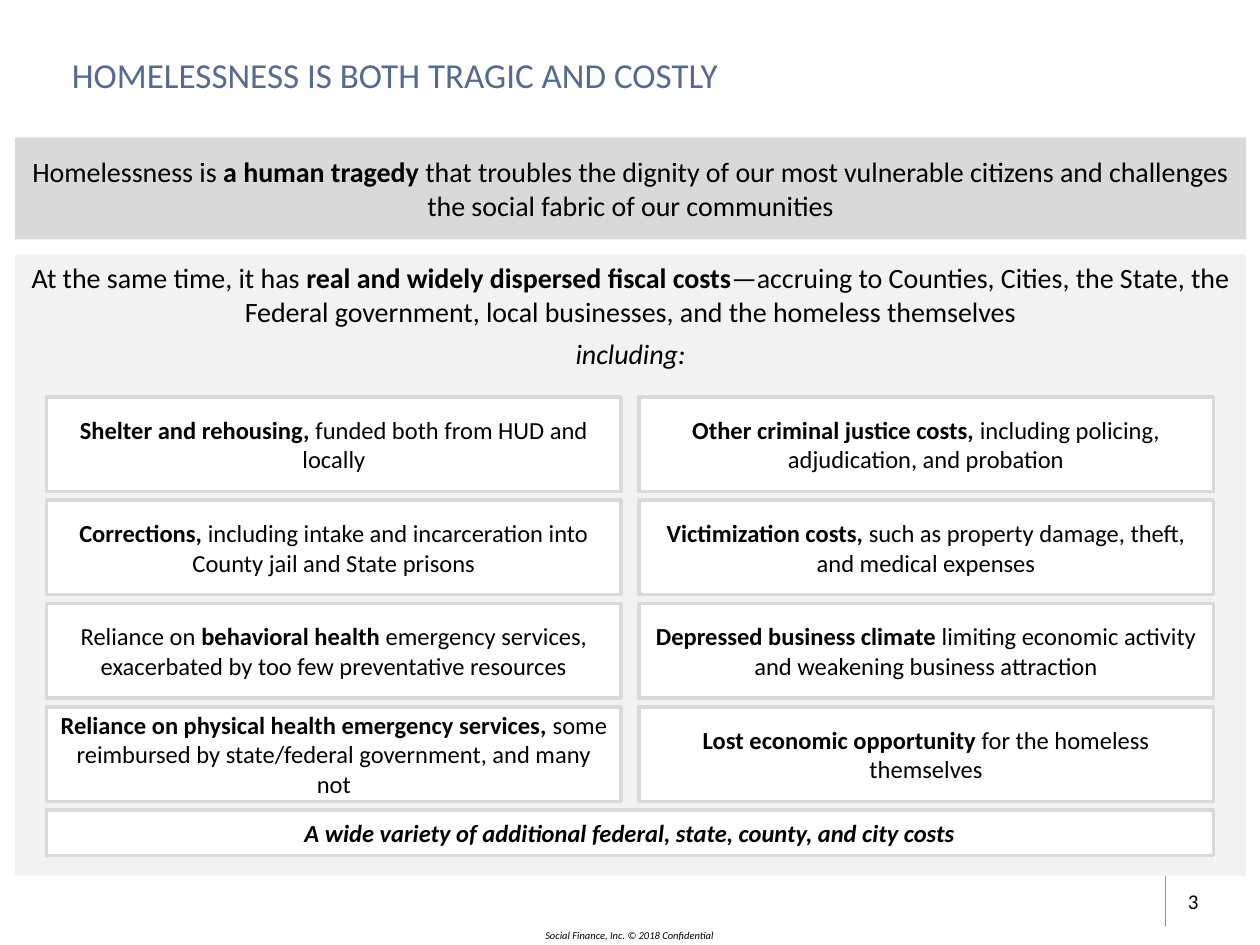
from dataclasses import dataclass

from lxml.etree import SubElement
from pptx import Presentation
from pptx.dml.color import RGBColor as Rgb
from pptx.enum.shapes import MSO_CONNECTOR as Link, MSO_SHAPE as Form
from pptx.enum.text import MSO_ANCHOR as Anchor, PP_ALIGN as Align
from pptx.oxml.ns import qn
from pptx.util import Inches, Pt

UNIT = Inches(0.1)
COLS, ROWS = 100, 75


@dataclass(frozen=True)
class Theme:
    """Hold the colours, font and type sizes."""
    font: str = "Calibri"
    ink: str = "000000"
    head: str = "556991"
    band: str = "D9D9D9"
    panel: str = "F2F2F2"
    card: str = "FFFFFF"
    rule: str = "9B8F8B"
    title: int = 20
    lead: int = 16
    body: int = 14
    page: int = 12
    note: int = 6
    edge: float = 2
    hair: float = 0.75


@dataclass(frozen=True)
class Box:
    """Hold a place in grid columns and rows."""
    x: float
    y: float
    w: float
    h: float

    def sub(self, x, y, w, h):
        """Return a box placed relative to this one."""
        return Box(self.x + x, self.y + y, w, h)

    def spot(self):
        """Return left, top, width and height as lengths."""
        return [round(n * UNIT) for n in (self.x, self.y, self.w, self.h)]


LOOK = Theme()

CARDS = [
    [
        [("Shelter and rehousing, ", "b"), ("funded both from HUD and locally", "")],
        [("Corrections, ", "b"),
         ("including intake and incarceration into County jail and State prisons", "")],
        [("Reliance on ", ""), ("behavioral health ", "b"),
         ("emergency services, exacerbated by too few preventative resources", "")],
        [("Reliance on physical health emergency services, ", "b"),
         ("some reimbursed by state/federal government, and many not", "")],
    ],
    [
        [("Other criminal justice costs, ", "b"),
         ("including policing, adjudication, and probation", "")],
        [("Victimization costs, ", "b"),
         ("such as property damage, theft, and medical expenses", "")],
        [("Depressed business climate ", "b"),
         ("limiting economic activity and weakening business attraction", "")],
        [("Lost economic opportunity ", "b"), ("for the homeless themselves", "")],
    ],
]
MORE = [("A wide variety of additional federal, state, county, and city costs", "bi")]
PLIGHT = [
    ("Homelessness is ", ""),
    ("a human tragedy ", "b"),
    ("that troubles the dignity of our most vulnerable citizens and challenges "
     "the social fabric of our communities", ""),
]
COSTS = [
    ("At the same time, it has ", ""),
    ("real and widely dispersed fiscal costs", "b"),
    ("—accruing to Counties, Cities, the State, the Federal government, "
     "local businesses, and the homeless themselves", ""),
]


def write(frame, paras, size, color=LOOK.ink, align=Align.CENTER, gap=0):
    """Fill a text frame run by run."""
    frame.word_wrap = True
    for i, runs in enumerate(paras):
        para = frame.add_paragraph() if i else frame.paragraphs[0]
        para.alignment = align
        if i:
            para.space_before = Pt(gap)
        for text, style in runs:
            run = para.add_run()
            run.text = text
            font = run.font
            font.name, font.size = LOOK.font, Pt(size)
            font.bold, font.italic = "b" in style, "i" in style
            font.color.rgb = Rgb.from_string(color)


def block(slide, box, fill, paras, size, edge=None, anchor=Anchor.MIDDLE, gap=0):
    """Add a filled rectangle with text."""
    shape = slide.shapes.add_shape(Form.RECTANGLE, *box.spot())
    shape.shadow.inherit = False
    shape.fill.solid()
    shape.fill.fore_color.rgb = Rgb.from_string(fill)
    if edge:
        shape.line.color.rgb = Rgb.from_string(edge)
        shape.line.width = Pt(LOOK.edge)
    else:
        shape.line.fill.background()
    shape.text_frame.vertical_anchor = anchor
    write(shape.text_frame, paras, size, gap=gap)


def label(slide, box, runs, size, color=LOOK.ink, align=Align.LEFT,
          anchor=Anchor.MIDDLE, inset=0):
    """Add a plain line of text."""
    frame = slide.shapes.add_textbox(*box.spot()).text_frame
    frame.margin_left = Inches(inset)
    frame.margin_top = frame.margin_right = frame.margin_bottom = 0
    frame.vertical_anchor = anchor
    write(frame, [runs], size, color, align)


def footer(slide, box):
    """Place the page number, its rule and the copyright line."""
    label(slide, box.sub(93.3, 0, 6.7, 4), [("3", "")], LOOK.page, inset=0.1)
    x, y, _, h = box.sub(92.5, 0, 0, 4).spot()
    rule = slide.shapes.add_connector(Link.STRAIGHT, x, y, x, y + h)
    rule.line.color.rgb = Rgb.from_string(LOOK.rule)
    rule.line.width = Pt(LOOK.hair)
    SubElement(rule.element.spPr, qn("a:effectLst"))
    label(slide, box.sub(40.9, 4.2, 18.1, 1.1),
          [("Social Finance, Inc. © 2018 Confidential", "i")],
          LOOK.note, align=Align.CENTER, anchor=Anchor.TOP)


def cards(slide, box):
    """Place two columns of cost cards above one wide card."""
    gap, lane, high, last = 1.4, 0.7, 7.5, 3.6
    wide = (box.w - gap) / 2
    for c, column in enumerate(CARDS):
        for r, runs in enumerate(column):
            cell = box.sub(c * (wide + gap), r * (high + lane), wide, high)
            block(slide, cell, LOOK.card, [runs], LOOK.body, LOOK.band)
    foot = box.sub(0, box.h - last, box.w, last)
    block(slide, foot, LOOK.card, [MORE], LOOK.body, LOOK.band)


def costs(slide, box):
    """Place the cost panel and its cards."""
    block(slide, box, LOOK.panel, [COSTS, [("including:", "i")]], LOOK.lead,
          anchor=Anchor.TOP, gap=5)
    cards(slide, box.sub(2.5, 11.3, box.w - 5.1, 36.4))


def main():
    """Build and save the slide."""
    deck = Presentation()
    deck.slide_width, deck.slide_height = COLS * UNIT, ROWS * UNIT
    slide = deck.slides.add_slide(deck.slide_layouts[6])
    page = Box(0, 0, COLS, ROWS)
    footer(slide, page.sub(0, 69.5, COLS, 5.5))
    label(slide, page.sub(5.7, 4.1, 88.5, 3.6),
          [("HOMELESSNESS IS BOTH TRAGIC AND COSTLY", "")], LOOK.title, LOOK.head)
    block(slide, page.sub(1.2, 10.9, 97.7, 8.1), LOOK.band, [PLIGHT], LOOK.lead)
    costs(slide, page.sub(1.2, 20.2, 97.7, 49.3))
    deck.save("out.pptx")


if __name__ == "__main__":
    main()
